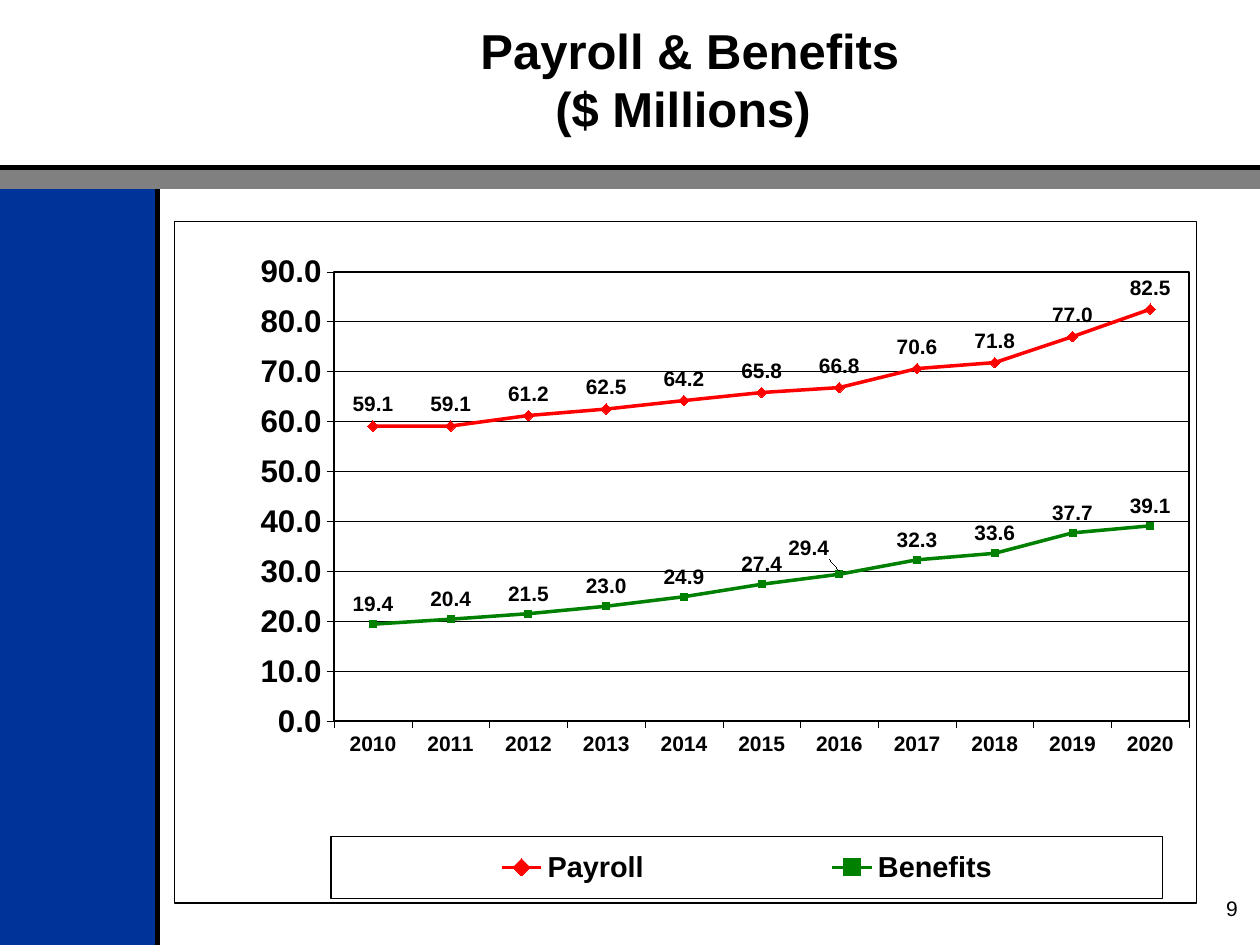
from lxml import etree
from pptx import Presentation
from pptx.chart.data import CategoryChartData
from pptx.dml.color import RGBColor
from pptx.enum import chart as ec, shapes, text
from pptx.oxml import parse_xml
from pptx.oxml.ns import nsdecls, qn
from pptx.util import Cm, Pt

BLACK = RGBColor(0x00, 0x00, 0x00)
BLUE = RGBColor(0x00, 0x33, 0x99)
GRAY = RGBColor(0x80, 0x80, 0x80)
RED = RGBColor(0xFF, 0x00, 0x00)
GREEN = RGBColor(0x00, 0x80, 0x00)
FONT = "Arial"

WIDTH, HEIGHT = 25.4, 19.05
SIDEBAR_WIDTH, RULE_TOP, BAND_BOTTOM = 3.18, 3.38, 3.81

TITLE = " Payroll & Benefits\v($ Millions)"
PAGE_NUMBER = "9"
YEARS = [str(year) for year in range(2010, 2021)]
SERIES = [
    ("Payroll ", RED, ec.XL_MARKER_STYLE.DIAMOND, 6,
     [59.1, 59.1, 61.2, 62.5, 64.2, 65.8, 66.8, 70.6, 71.8, 77.0, 82.5]),
    ("Benefits", GREEN, ec.XL_MARKER_STYLE.SQUARE, 4,
     [19.4, 20.4, 21.5, 23.0, 24.9, 27.4, 29.4, 32.3, 33.6, 37.7, 39.1]),
]
PLOT_LAYOUT = {"layoutTarget": "inner", "xMode": "edge", "yMode": "edge",
               "x": 0.156, "y": 0.074, "w": 0.837, "h": 0.659}
LEGEND_LAYOUT = {"xMode": "edge", "yMode": "edge",
                 "x": 0.153, "y": 0.902, "w": 0.814, "h": 0.091}
MOVED_LABEL = 6
MOVED_LABEL_LAYOUT = {"x": -0.03, "y": -0.01}


def set_font(font, size, bold=True):
    font.name, font.size, font.bold = FONT, Pt(size), bold
    font.color.rgb = BLACK


def set_line(line, color, width):
    line.color.rgb = color
    line.width = Pt(width)


def add_bar(slide, left, top, width, height, color):
    bar = slide.shapes.add_shape(shapes.MSO_SHAPE.RECTANGLE,
                                 Cm(left), Cm(top), Cm(width), Cm(height))
    bar.shadow.inherit = False
    bar.fill.solid()
    bar.fill.fore_color.rgb = color
    bar.line.fill.background()


def add_rule(slide, *ends):
    rule = slide.shapes.add_connector(shapes.MSO_CONNECTOR.STRAIGHT, *map(Cm, ends))
    set_line(rule.line, BLACK, 3)
    etree.SubElement(rule._element.spPr, qn("a:effectLst"))


def add_text(slide, content, box, size, bold, alignment, anchor):
    frame = slide.shapes.add_textbox(*map(Cm, box)).text_frame
    frame.word_wrap = True
    frame.vertical_anchor = anchor
    paragraph = frame.paragraphs[0]
    paragraph.text = content
    paragraph.alignment = alignment
    set_font(paragraph.font, size, bold)


def set_layout(previous, values):
    following = previous.getnext()
    if following is not None and following.tag == qn("c:layout"):
        following.getparent().remove(following)
    items = "".join(f'<c:{name} val="{value}"/>' for name, value in values.items())
    previous.addnext(parse_xml(
        f'<c:layout {nsdecls("c")}><c:manualLayout>{items}</c:manualLayout></c:layout>'))


def border(width):
    return parse_xml(
        f'<c:spPr {nsdecls("c", "a")}><a:noFill/><a:ln w="{Pt(width)}"><a:solidFill>'
        f'<a:srgbClr val="{BLACK}"/></a:solidFill></a:ln></c:spPr>')


def style_axis(axis, size):
    set_font(axis.tick_labels.font, size)
    set_line(axis.format.line, BLACK, 0.25)
    axis.major_tick_mark = ec.XL_TICK_MARK.OUTSIDE
    axis.minor_tick_mark = ec.XL_TICK_MARK.NONE


def style_series(series, color, marker, marker_size):
    series.smooth = False
    set_line(series.format.line, color, 2)
    series.marker.style, series.marker.size = marker, marker_size
    series.marker.format.fill.solid()
    series.marker.format.fill.fore_color.rgb = color
    set_line(series.marker.format.line, color, 0.75)
    labels = series.data_labels
    labels.show_value = True
    labels.number_format, labels.number_format_is_linked = "#,##0.0", False
    labels.position = ec.XL_LABEL_POSITION.ABOVE
    set_font(labels.font, 11.9)


def add_line_chart(slide):
    data = CategoryChartData(number_format="#,##0.0")
    data.categories = YEARS
    for name, _, _, _, values in SERIES:
        data.add_series(name, values)
    chart = slide.shapes.add_chart(ec.XL_CHART_TYPE.LINE_MARKERS, Cm(3.51), Cm(4.45),
                                   Cm(20.62), Cm(13.77), data).chart
    chart.has_title = False
    set_font(chart.font, 17.9)
    plot = chart.plots[0]
    plot.vary_by_categories = False
    for series, (_, color, marker, size, _) in zip(plot.series, SERIES):
        style_series(series, color, marker, size)

    style_axis(chart.category_axis, 12)
    style_axis(chart.value_axis, 17.9)
    value_axis = chart.value_axis
    value_axis.minimum_scale, value_axis.maximum_scale, value_axis.major_unit = 0, 90, 10
    value_axis.tick_labels.number_format = "#,##0.0"
    value_axis.tick_labels.number_format_is_linked = False
    value_axis.has_major_gridlines = True
    set_line(value_axis.major_gridlines.format.line, BLACK, 0.25)

    chart.has_legend = True
    legend = chart.legend
    legend.position = ec.XL_LEGEND_POSITION.BOTTOM
    legend.include_in_layout = False
    set_font(legend.font, 16.5)
    set_layout(legend._element.find(qn("c:legendPos")), LEGEND_LAYOUT)
    legend._element.find(qn("c:overlay")).addnext(border(0.75))

    label = plot.series[1].points[MOVED_LABEL].data_label
    set_font(label.font, 11.9)
    label.position = ec.XL_LABEL_POSITION.ABOVE
    label_index = plot.series[1]._element.find(".//" + qn("c:dLbl") + "/" + qn("c:idx"))
    set_layout(label_index, MOVED_LABEL_LAYOUT)

    space = chart._chartSpace
    plot_area = space.chart.plotArea
    old_layout = plot_area.find(qn("c:layout"))
    if old_layout is not None:
        plot_area.remove(old_layout)
    first = plot_area[0]
    set_layout(first, PLOT_LAYOUT)
    plot_area.insert(0, first.getnext())
    plot_area.append(border(1))
    space.chart.addnext(border(0.75))


def main():
    presentation = Presentation()
    presentation.slide_width, presentation.slide_height = Cm(WIDTH), Cm(HEIGHT)
    slide = presentation.slides.add_slide(presentation.slide_layouts[6])
    add_bar(slide, 0, BAND_BOTTOM, SIDEBAR_WIDTH, HEIGHT - BAND_BOTTOM, BLUE)
    add_rule(slide, SIDEBAR_WIDTH, RULE_TOP, SIDEBAR_WIDTH, HEIGHT)
    add_bar(slide, 0, RULE_TOP, WIDTH, BAND_BOTTOM - RULE_TOP, GRAY)
    add_rule(slide, 0, RULE_TOP, WIDTH, RULE_TOP)
    add_text(slide, PAGE_NUMBER, (24.13, 17.93, 1.07, 1.32), 12, False,
             text.PP_ALIGN.RIGHT, text.MSO_ANCHOR.TOP)
    add_text(slide, TITLE, (4.88, 0, 17.78, 3.18), 28, True,
             text.PP_ALIGN.CENTER, text.MSO_ANCHOR.MIDDLE)
    add_line_chart(slide)
    presentation.save("out.pptx")


if __name__ == "__main__":
    main()
